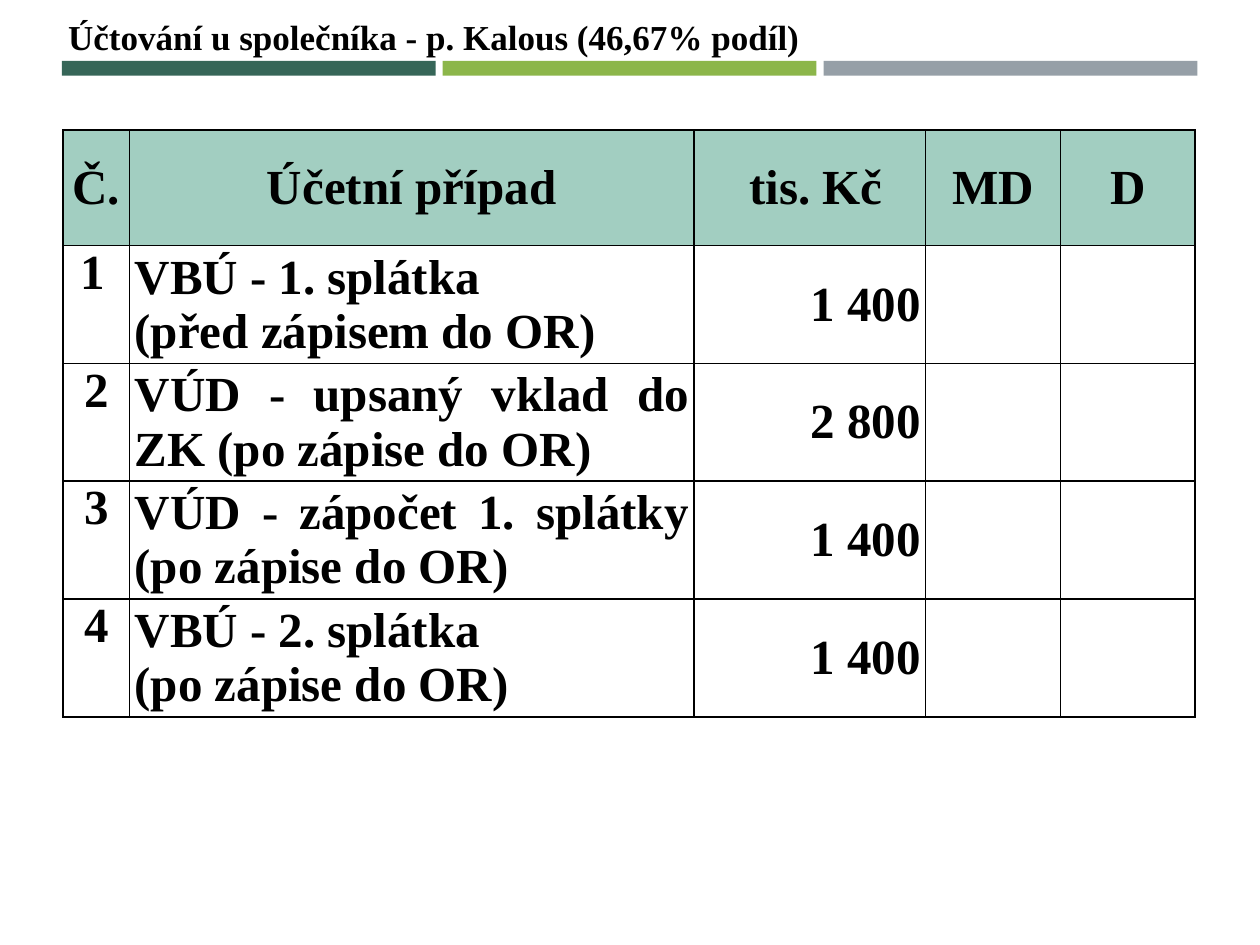
from lxml import etree
from pptx import Presentation
from pptx.dml import color
from pptx.enum import shapes, text
from pptx.oxml import ns
from pptx.util import Pt

COLORS = {"black": "000000", "header": "A2CEC1", "green": "366658",
          "lime": "8CB64A", "gray": "969FA7"}
FONT = "Times New Roman"
ALIGN = text.PP_ALIGN
MIDDLE = text.MSO_ANCHOR.MIDDLE


def format_text(frame, size, align):
    for para in frame.paragraphs:
        para.alignment = align
        for span in para.runs:
            span.font.name = FONT
            span.font.size = Pt(size)
            span.font.bold = True
            span.font.color.rgb = color.RGBColor.from_string(COLORS["black"])


def add_borders(cell):
    properties = cell._tc.get_or_add_tcPr()
    for index, side in enumerate(("lnL", "lnR", "lnT", "lnB")):
        line = etree.Element(ns.qn("a:" + side), w=str(Pt(1)))
        fill = etree.SubElement(line, ns.qn("a:solidFill"))
        etree.SubElement(fill, ns.qn("a:srgbClr"), val=COLORS["black"])
        properties.insert(index, line)


deck = Presentation()
deck.slide_width, deck.slide_height = Pt(720), Pt(540)
page = deck.slides.add_slide(deck.slide_layouts[5])

for index, name in enumerate(("green", "lime", "gray")):
    bar = page.shapes.add_shape(shapes.MSO_SHAPE.RECTANGLE, Pt(35.4 + index * 217.6),
                                Pt(34.8), Pt(213.6), Pt(8.4))
    bar.shadow.inherit = False
    bar.fill.solid()
    bar.fill.fore_color.rgb = color.RGBColor.from_string(COLORS[name])
    bar.line.fill.background()

title = page.shapes.title
title.left, title.top, title.width, title.height = Pt(31.7), Pt(5), Pt(435.6), Pt(31.5)
title.text_frame.text = "Účtování u společníka - p. Kalous (46,67% podíl)"
title.text_frame.word_wrap = False
title.text_frame.auto_size = text.MSO_AUTO_SIZE.SHAPE_TO_FIT_TEXT
title.text_frame.vertical_anchor = MIDDLE
format_text(title.text_frame, 20, ALIGN.LEFT)

rows = [
    ("Č.", "Účetní případ", " tis. Kč", "MD", "D"),
    (" 1", "VBÚ - 1. splátka \n(před zápisem do OR)", "1 400", "", ""),
    ("2", "VÚD - upsaný vklad do ZK (po zápise do OR)", "2 800", "", ""),
    ("3", "VÚD - zápočet 1. splátky (po zápise do OR)", "1 400", "", ""),
    ("4", "VBÚ - 2. splátka \n(po zápise do OR)", "1 400", "", ""),
]
widths = [38, 322.6, 132.4, 77, 77]
heights = [66] + [67.3] * 4
aligns = [ALIGN.CENTER, ALIGN.JUSTIFY, ALIGN.RIGHT, ALIGN.CENTER, ALIGN.CENTER]

table = page.shapes.add_table(len(rows), len(widths), Pt(36), Pt(74.4),
                              Pt(sum(widths)), Pt(sum(heights))).table
for column, width in zip(table.columns, widths):
    column.width = Pt(width)
for row, height in zip(table.rows, heights):
    row.height = Pt(height)

for r, values in enumerate(rows):
    for c, value in enumerate(values):
        cell = table.cell(r, c)
        cell.margin_left = cell.margin_right = Pt(3)
        cell.margin_top = cell.margin_bottom = 0
        cell.vertical_anchor = text.MSO_ANCHOR.TOP if r and c == 0 else MIDDLE
        cell.text_frame.text = value
        align = aligns[c] if r else ALIGN.CENTER
        if value == " 1":
            align = ALIGN.LEFT
        format_text(cell.text_frame, 28, align)
        if r == 0:
            cell.fill.solid()
            cell.fill.fore_color.rgb = color.RGBColor.from_string(COLORS["header"])
        else:
            cell.fill.background()
        add_borders(cell)

deck.save("out.pptx")
